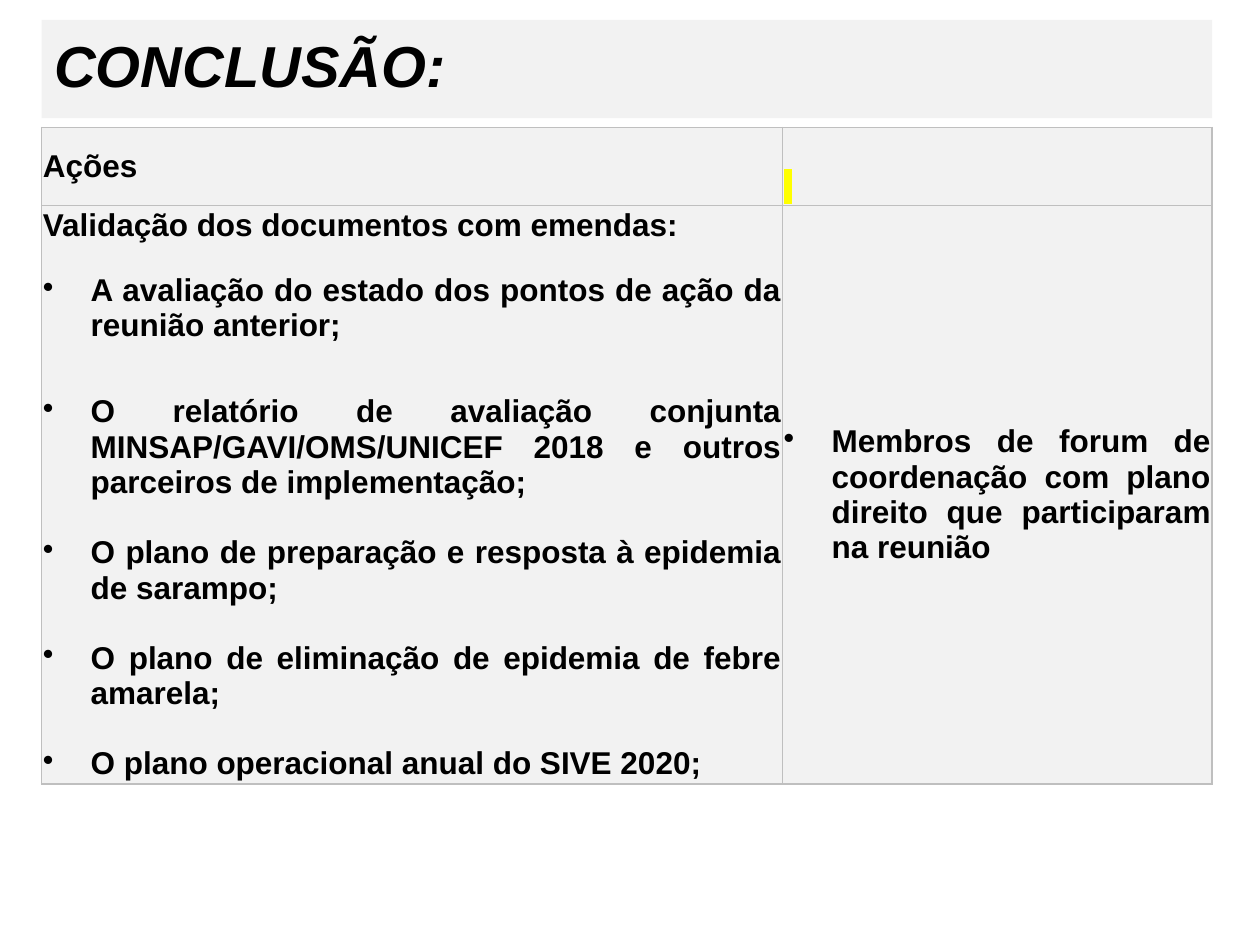
import pptx
import pptx.util
import pptx.dml.color
import pptx.enum.text
import pptx.oxml
import pptx.oxml.ns

theme = {
    "panel": "F2F2F2", "border": "BFBFBF", "text": "000000", "marker": "FFFF00",
    "font": "Arial", "title_size": 33, "body_size": 18, "border_width": 1,
}
namespace = pptx.oxml.ns.nsdecls("a")
align = pptx.enum.text.PP_ALIGN
anchor = pptx.enum.text.MSO_ANCHOR


def add_span(para, text, size, italic=False):
    span = para.add_run()
    span.text = text
    font_format = {"name": theme["font"], "size": pptx.util.Pt(size), "bold": True, "italic": italic}
    for name, value in font_format.items():
        setattr(span.font, name, value)
    span.font.color.rgb = pptx.dml.color.RGBColor.from_string(theme["text"])
    return span


def paint(fill):
    fill.solid()
    fill.fore_color.rgb = pptx.dml.color.RGBColor.from_string(theme["panel"])


deck = pptx.Presentation()
deck.slide_width = pptx.util.Inches(10)
deck.slide_height = pptx.util.Inches(7.5)
page = deck.slides.add_slide(deck.slide_layouts[5])
left = int(deck.slide_width * 0.033)
width = int(deck.slide_width * 0.929)

title = page.shapes.title
title_place = {
    "left": left, "top": int(deck.slide_height * 0.021),
    "width": width, "height": int(deck.slide_height * 0.104),
}
for name, value in title_place.items():
    setattr(title, name, value)
paint(title.fill)
title.text_frame.auto_size = pptx.enum.text.MSO_AUTO_SIZE.NONE
title.text_frame.vertical_anchor = anchor.MIDDLE
title_para = title.text_frame.paragraphs[0]
title_para.alignment = align.LEFT
title_para.line_spacing = 0.9
add_span(title_para, "CONCLUSÃO:", theme["title_size"], italic=True)

column_shares = [0.633, 0.367]
row_heights = [0.62, 4.59]
table = page.shapes.add_table(
    2, 2, left, int(deck.slide_height * 0.135), width, pptx.util.Inches(sum(row_heights))
).table
table.first_row = False
table.horz_banding = False
for column, share in zip(table.columns, column_shares):
    column.width = int(width * share)
for row, height in zip(table.rows, row_heights):
    row.height = pptx.util.Inches(height)

contents = {
    (0, 0): [("Ações", False, 0)],
    (0, 1): [("\N{NO-BREAK SPACE}", False, 0)],
    (1, 0): [
        ("Validação dos documentos com emendas:", False, 0),
        ("A avaliação do estado dos pontos de ação da reunião anterior;", True, 17),
        ("O relatório de avaliação conjunta MINSAP/GAVI/OMS/UNICEF 2018 e outros parceiros de implementação;", True, 29),
        ("O plano de preparação e resposta à epidemia de sarampo;", True, 20),
        ("O plano de eliminação de epidemia de febre amarela;", True, 20),
        ("O plano operacional anual do SIVE 2020;", True, 20),
    ],
    (1, 1): [("Membros de forum de coordenação com plano direito que participaram na reunião", True, 0)],
}
for (row, column), items in contents.items():
    cell = table.cell(row, column)
    paint(cell.fill)
    cell.vertical_anchor = anchor.BOTTOM if (row, column) == (0, 1) else anchor.MIDDLE
    for side in ("left", "right", "top", "bottom"):
        setattr(cell, f"margin_{side}", pptx.util.Inches(0.01))
    cell_properties = cell._tc.get_or_add_tcPr()
    for index, side in enumerate("LRTB"):
        cell_properties.insert(index, pptx.oxml.parse_xml(
            f'<a:ln{side} {namespace} w="{pptx.util.Pt(theme["border_width"])}"><a:solidFill>'
            f'<a:srgbClr val="{theme["border"]}"/></a:solidFill></a:ln{side}>'))
    for index, (text, bulleted, space) in enumerate(items):
        para = cell.text_frame.add_paragraph() if index else cell.text_frame.paragraphs[0]
        if bulleted:
            properties = para._p.get_or_add_pPr()
            indent = pptx.util.Inches(0.38)
            properties.set("marL", str(indent))
            properties.set("indent", str(-indent))
            properties.append(pptx.oxml.parse_xml(f'<a:buChar {namespace} char="•"/>'))
        para.alignment = align.JUSTIFY
        para.space_before = pptx.util.Pt(space)
        add_span(para, text, theme["body_size"])

marker = table.cell(0, 1).text_frame.paragraphs[0].runs[0]
latin = marker._r.rPr.find(pptx.oxml.ns.qn("a:latin"))
latin.addprevious(pptx.oxml.parse_xml(
    f'<a:highlight {namespace}><a:srgbClr val="{theme["marker"]}"/></a:highlight>'))

deck.save("out.pptx")
